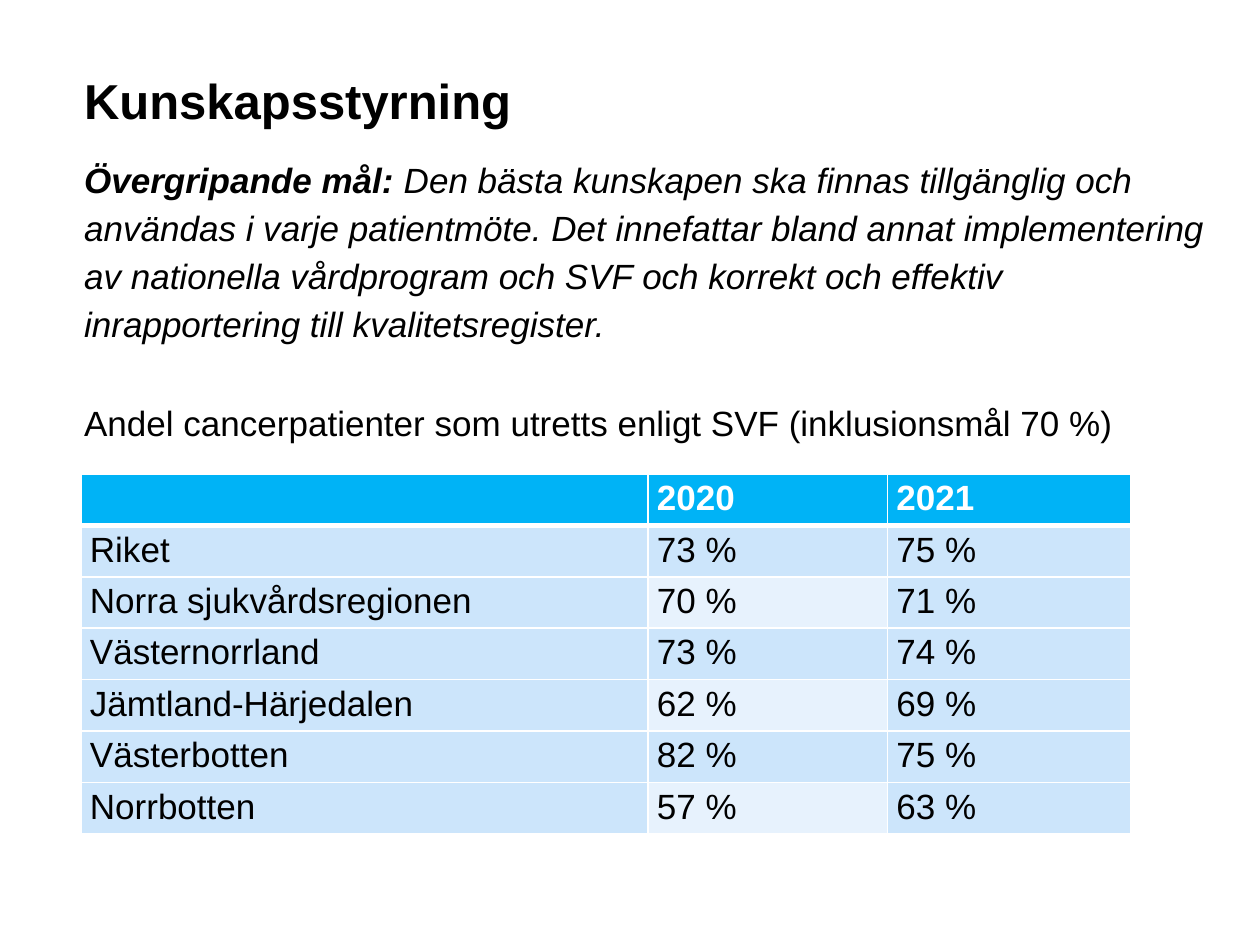
from lxml import etree
from pptx import Presentation
from pptx.dml.color import RGBColor
from pptx.enum import text
from pptx.oxml.ns import qn
from pptx.util import Pt

BLACK = RGBColor(0x00, 0x00, 0x00)
WHITE = RGBColor(0xFF, 0xFF, 0xFF)
HEADER_BLUE = RGBColor(0x00, 0xB3, 0xF6)
BAND_BLUE = RGBColor(0xCC, 0xE5, 0xFB)
PALE_BLUE = RGBColor(0xE7, 0xF2, 0xFD)
FONT = "Arial"
BODY_SIZE = 20

TITLE = "Kunskapsstyrning"
GOAL_LABEL = "Övergripande mål: "
GOAL = (
    "Den bästa kunskapen ska finnas tillgänglig och användas i varje patientmöte. "
    "Det innefattar bland annat implementering av nationella vårdprogram och SVF "
    "och korrekt och effektiv inrapportering till kvalitetsregister."
)
CAPTION = "Andel cancerpatienter som utretts enligt SVF (inklusionsmål 70 %)"
ROWS = [
    ("", "2020", "2021"),
    ("Riket", "73 %", "75 %"),
    ("Norra sjukvårdsregionen", "70 %", "71 %"),
    ("Västernorrland", "73 %", "74 %"),
    ("Jämtland-Härjedalen", "62 %", "69 %"),
    ("Västerbotten", "82 %", "75 %"),
    ("Norrbotten", "57 %", "63 %"),
]

TEXT_LEFT = 41
TABLE_LEFT, TABLE_TOP = 46.2, 270.8
COLUMN_WIDTHS = (324, 136.9, 139.2)
ROW_HEIGHT = 29.4


def style_run(run, size=BODY_SIZE, color=BLACK, bold=False, italic=False):
    font = run.font
    font.name, font.size = FONT, Pt(size)
    font.bold, font.italic = bold, italic
    font.color.rgb = color


def add_text(slide, top, width, height, parts, anchor):
    """Add a one-paragraph text box; parts are (wording, run style) pairs."""
    box = slide.shapes.add_textbox(Pt(TEXT_LEFT), Pt(top), Pt(width), Pt(height))
    frame = box.text_frame
    frame.word_wrap = True
    frame.vertical_anchor = anchor
    paragraph = frame.paragraphs[0]
    for wording, style in parts:
        run = paragraph.add_run()
        run.text = wording
        style_run(run, **style)
    return paragraph


def set_borders(cell, widths):
    """Draw white borders; widths maps L, R, T and B to points."""
    properties = cell._tc.get_or_add_tcPr()
    for side, width in widths.items():
        line = etree.SubElement(properties, qn(f"a:ln{side}"), w=str(Pt(width)))
        fill = etree.SubElement(line, qn("a:solidFill"))
        etree.SubElement(fill, qn("a:srgbClr"), val=str(WHITE))


def cell_color(row, column):
    if row == 0:
        return HEADER_BLUE
    return PALE_BLUE if column == 1 and row % 2 == 0 else BAND_BLUE


def add_result_table(slide):
    table = slide.shapes.add_table(
        len(ROWS), len(COLUMN_WIDTHS), Pt(TABLE_LEFT), Pt(TABLE_TOP),
        Pt(sum(COLUMN_WIDTHS)), Pt(ROW_HEIGHT * len(ROWS)),
    ).table
    for column, width in zip(table.columns, COLUMN_WIDTHS):
        column.width = Pt(width)
    for r, values in enumerate(ROWS):
        table.rows[r].height = Pt(ROW_HEIGHT)
        for c, value in enumerate(values):
            cell = table.cell(r, c)
            cell.margin_left = cell.margin_right = Pt(5.2)
            cell.margin_top, cell.margin_bottom = Pt(2.9), Pt(0)
            set_borders(cell, {"L": 1, "R": 1, "T": 3 if r == 1 else 1,
                               "B": 3 if r == 0 else 1})
            cell.fill.solid()
            cell.fill.fore_color.rgb = cell_color(r, c)
            cell.text_frame.text = value
            for run in cell.text_frame.paragraphs[0].runs:
                style_run(run, color=BLACK if r else WHITE, bold=r == 0)


def main():
    presentation = Presentation()
    presentation.slide_width, presentation.slide_height = Pt(720), Pt(540)
    slide = presentation.slides.add_slide(presentation.slide_layouts[6])
    middle, top = text.MSO_ANCHOR.MIDDLE, text.MSO_ANCHOR.TOP

    add_text(slide, 30.2, 610.6, 53.3, [(TITLE, {"size": 28, "bold": True})], middle)
    goal = add_text(slide, 83.5, 668.2, 120, [
        (GOAL_LABEL, {"bold": True, "italic": True}),
        (GOAL, {"italic": True}),
    ], top)
    goal.line_spacing = Pt(27.4)
    add_result_table(slide)
    add_text(slide, 225.4, 627.1, 31.7, [(CAPTION, {})], middle)

    presentation.save("out.pptx")


if __name__ == "__main__":
    main()
